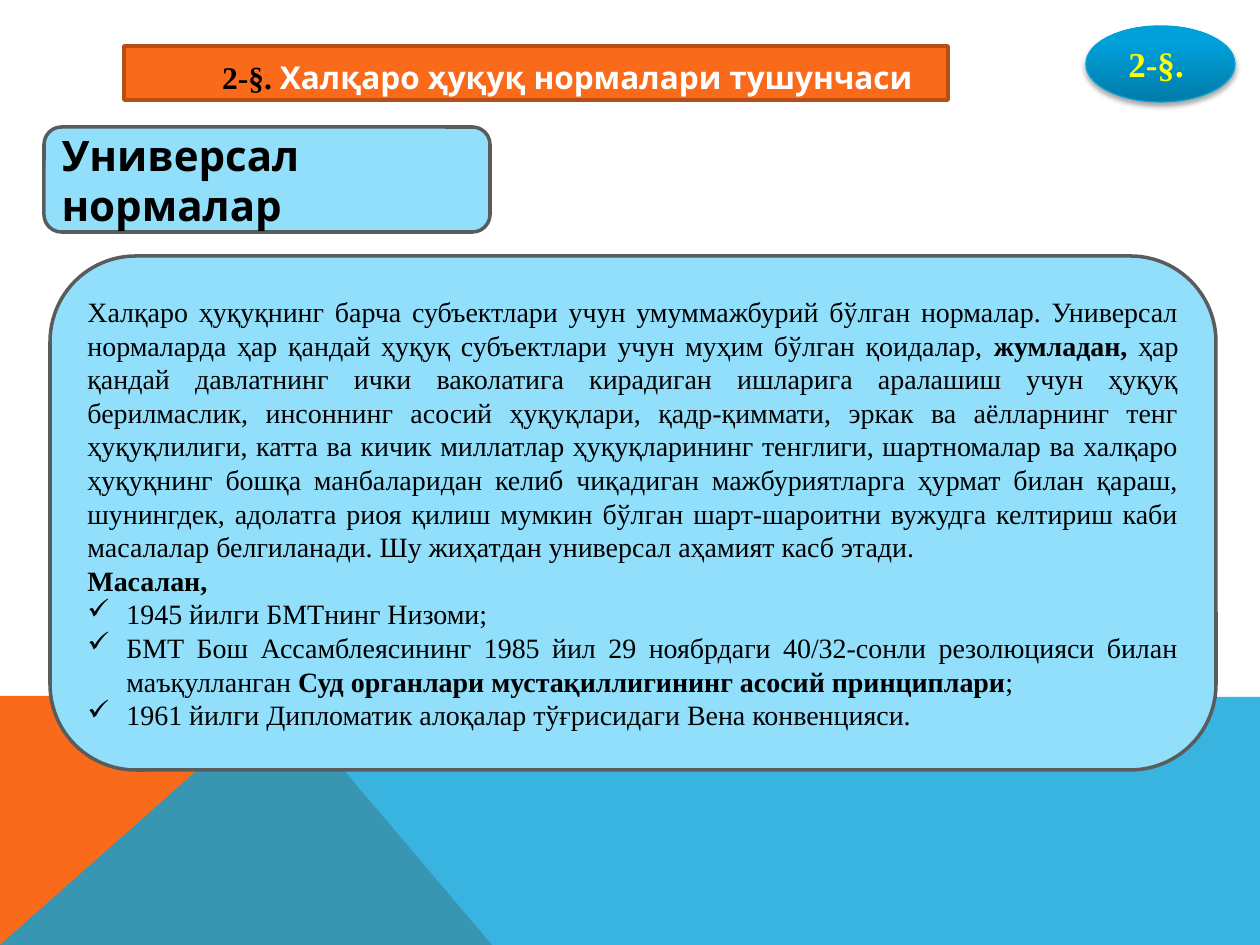
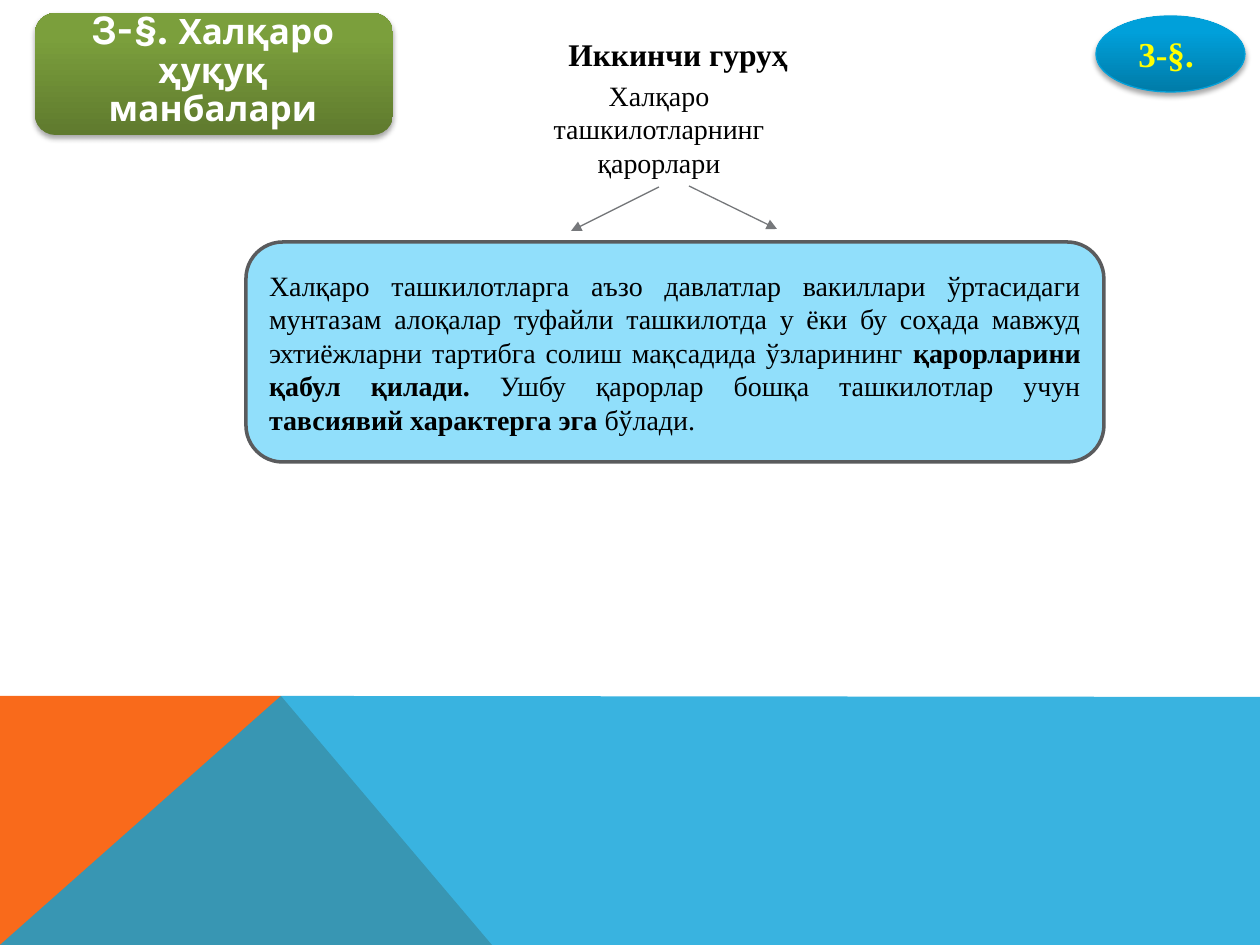
from lxml import etree
from pptx import Presentation
from pptx.dml.color import RGBColor
from pptx.enum.shapes import MSO_CONNECTOR, MSO_SHAPE
from pptx.enum.text import MSO_ANCHOR, MSO_AUTO_SIZE, PP_ALIGN
from pptx.oxml.ns import qn
from pptx.util import Pt

RECTANGLE, ROUNDED, OVAL = MSO_SHAPE.RECTANGLE, MSO_SHAPE.ROUNDED_RECTANGLE, MSO_SHAPE.OVAL
STRAIGHT = MSO_CONNECTOR.STRAIGHT
LEFT, CENTER, JUSTIFY = PP_ALIGN.LEFT, PP_ALIGN.CENTER, PP_ALIGN.JUSTIFY
TOP, MIDDLE = MSO_ANCHOR.TOP, MSO_ANCHOR.MIDDLE
GROW, FIXED = MSO_AUTO_SIZE.SHAPE_TO_FIT_TEXT, MSO_AUTO_SIZE.NONE

SCALE = 914400 / 126
WIDTH, HEIGHT = 1260, 945
SERIF, SANS = "Times New Roman", "Karla"
BLACK, WHITE, YELLOW = "000000", "FFFFFF", "FFFF00"
ORANGE, ORANGE_EDGE, BAND_BLUE = "F96A1B", "B84E14", "08A1D9"
CARD_FILL, CARD_EDGE, ARROW_GRAY = "91DFFB", "5A5B5D", "76787B"
BADGE_GRADIENT, BADGE_EDGE = ("007BA8", "00A0DA"), "03A0D9"
SECTION_GRADIENT = ("5F7A2E", "7B9F3C")
BULLET, BULLET_INDENT = "✓", 39

BANDS = [
    ([(0, 945), (0, 696), (281, 696), (492, 945)], ORANGE, 100),
    ([(0, 945), (281, 696), (1260, 697), (1260, 945)], BAND_BLUE, 80),
]

NORMS_TITLE = [[
    ("2-§. ", {"font": SERIF, "color": BLACK}),
    ("Халқаро ҳуқуқ нормалари тушунчаси", {}),
]]
NORMS_LABEL = [[("Универсал нормалар", {})]]
BOLD = {"bold": True}
NORMS_TEXT = [
    [
        ("Халқаро ҳуқуқнинг барча субъектлари учун умуммажбурий бўлган нормалар. "
         "Универсал нормаларда ҳар қандай ҳуқуқ субъектлари учун муҳим бўлган қоидалар, ", {}),
        ("жумладан, ", BOLD),
        ("ҳар қандай давлатнинг ички ваколатига кирадиган ишларига аралашиш учун ҳуқуқ "
         "берилмаслик, инсоннинг асосий ҳуқуқлари, қадр-қиммати, эркак ва аёлларнинг тенг "
         "ҳуқуқлилиги, катта ва кичик миллатлар ҳуқуқларининг тенглиги, шартномалар ва халқаро "
         "ҳуқуқнинг бошқа манбаларидан келиб чиқадиган мажбуриятларга ҳурмат билан қараш, "
         "шунингдек, адолатга риоя қилиш мумкин бўлган шарт-шароитни вужудга келтириш каби "
         "масалалар белгиланади. Шу жиҳатдан универсал аҳамият касб этади. ", {}),
    ],
    [("Масалан, ", BOLD)],
    [("1945 йилги БМТнинг Низоми;", {})],
    [
        ("БМТ Бош Ассамблеясининг 1985 йил 29 ноябрдаги 40/32-сонли резолюцияси билан "
         "маъқулланган ", {}),
        ("Суд органлари мустақиллигининг асосий принциплари", BOLD),
        (";", {}),
    ],
    [("1961 йилги Дипломатик алоқалар тўғрисидаги Вена конвенцияси. ", {})],
]
SOURCES_TITLE = [[("3-§. ", {"size": 24}), ("Халқаро ҳуқуқ манбалари", {})]]
GROUP_HEADING = [[("Иккинчи гуруҳ", {})]]
DECISIONS_HEADING = [[("Халқаро ташкилотларнинг қарорлари", {})]]
DECISIONS_TEXT = [[
    ("Халқаро ташкилотларга аъзо давлатлар вакиллари ўртасидаги мунтазам алоқалар туфайли "
     "ташкилотда у ёки бу соҳада мавжуд эхтиёжларни тартибга солиш мақсадида ўзларининг ", {}),
    ("қарорларини қабул қилади.", BOLD),
    (" Ушбу қарорлар бошқа ташкилотлар учун ", {}),
    ("тавсиявий характерга эга ", BOLD),
    ("бўлади. ", {}),
]]


def px(length):
    return round(length * SCALE)


def color(hex_string):
    return RGBColor.from_string(hex_string)


def add_xml(parent, tag, **attributes):
    return etree.SubElement(parent, qn(tag), {key: str(value) for key, value in attributes.items()})


def add_shape(shapes, preset, box, fill, edge=None, edge_width=2):
    shape = shapes.add_shape(preset, *map(px, box))
    shape.shadow.inherit = False
    if isinstance(fill, tuple):
        shape.fill.gradient()
        shape.fill.gradient_angle = 90
        for stop, position, hex_string in zip(shape.fill.gradient_stops, (0, 0.8), fill):
            stop.position = position
            stop.color.rgb = color(hex_string)
        add_soft_shadow(shape)
    else:
        shape.fill.solid()
        shape.fill.fore_color.rgb = color(fill)
    if edge:
        shape.line.color.rgb = color(edge)
        shape.line.width = Pt(edge_width)
    else:
        shape.line.fill.background()
    return shape


def add_soft_shadow(shape):
    effects = shape._element.spPr.find(qn("a:effectLst"))
    shadow = add_xml(effects, "a:outerShdw", blurRad=Pt(3.1), dist=Pt(1.8), dir=5400000, rotWithShape=0)
    add_xml(add_xml(shadow, "a:srgbClr", val=BLACK), "a:alpha", val=35000)


def write_text(shape, paragraphs, *, font=SERIF, size=16, hex_color=BLACK, bold=False,
               align=JUSTIFY, anchor=MIDDLE, wrap=True, auto_size=FIXED, spacing=None,
               indent=0, bulleted=(), inset=None):
    frame = shape.text_frame
    frame.word_wrap = wrap
    frame.auto_size = auto_size
    frame.vertical_anchor = anchor
    if inset is not None:
        frame.margin_left = frame.margin_right = frame.margin_top = frame.margin_bottom = px(inset)
    for index, runs in enumerate(paragraphs):
        paragraph = frame.add_paragraph() if index else frame.paragraphs[0]
        paragraph.alignment = align
        if spacing:
            paragraph.line_spacing = spacing
        properties = paragraph._p.get_or_add_pPr()
        if index in bulleted:
            properties.set("marL", str(px(BULLET_INDENT)))
            properties.set("indent", str(-px(BULLET_INDENT)))
            add_xml(properties, "a:buChar", char=BULLET)
        elif indent:
            properties.set("marL", str(px(indent)))
        for text, changes in runs:
            run = paragraph.add_run()
            run.text = text
            run.font.name = changes.get("font", font)
            run.font.size = Pt(changes.get("size", size))
            run.font.bold = changes.get("bold", bold)
            run.font.color.rgb = color(changes.get("color", hex_color))


def add_text_box(shapes, box, paragraphs, **text_format):
    text_box = shapes.add_textbox(*map(px, box))
    write_text(text_box, paragraphs, **text_format)
    return text_box


def add_card(slide, box, paragraphs, **text_format):
    card = add_shape(slide.shapes, ROUNDED, box, CARD_FILL, CARD_EDGE)
    write_text(card, paragraphs, **text_format)


def add_badge(slide, left, top, text):
    badge = add_shape(slide.shapes, OVAL, (left, top, 149, 76), BADGE_GRADIENT, BADGE_EDGE, 0.75)
    write_text(badge, [[(text, {})]], size=20, hex_color=YELLOW, bold=True, align=CENTER)


def add_arrow(slide, start, end):
    arrow = slide.shapes.add_connector(STRAIGHT, *map(px, start + end))
    arrow.line.color.rgb = color(ARROW_GRAY)
    arrow.line.width = Pt(0.75)
    add_xml(arrow.line._get_or_add_ln(), "a:tailEnd", type="triangle")
    add_xml(arrow._element.spPr, "a:effectLst")
    return arrow


def add_banded_slide(presentation):
    slide = presentation.slides.add_slide(presentation.slide_layouts[6])
    for points, hex_string, opacity in BANDS:
        builder = slide.shapes.build_freeform(*points[0], scale=SCALE)
        builder.add_line_segments(points[1:], close=True)
        band = builder.convert_to_shape()
        band.shadow.inherit = False
        band.fill.solid()
        band.fill.fore_color.rgb = color(hex_string)
        band.line.fill.background()
        if opacity < 100:
            fill_color = band._element.spPr.find(qn("a:solidFill"))[0]
            add_xml(fill_color, "a:alpha", val=opacity * 1000)
    return slide


def build_norms_slide(presentation):
    slide = add_banded_slide(presentation)
    banner = add_shape(slide.shapes, RECTANGLE, (124, 46, 824, 54), ORANGE, ORANGE_EDGE)
    write_text(banner, NORMS_TITLE, font=SANS, size=18, hex_color=WHITE, bold=True,
               align=CENTER, anchor=TOP, auto_size=GROW, spacing=1.15, indent=63)
    add_badge(slide, 1086, 26, "2-§. ")
    add_card(slide, (44, 127, 446, 105), NORMS_LABEL, font=SANS, size=24, bold=True)
    add_card(slide, (50, 256, 1166, 514), NORMS_TEXT, bulleted=(2, 3, 4))


def build_sources_slide(presentation):
    slide = add_banded_slide(presentation)
    add_badge(slide, 1096, 16, "3-§. ")
    section = slide.shapes.add_group_shape().shapes
    add_shape(section, ROUNDED, (35, 13, 358, 122), SECTION_GRADIENT)
    add_text_box(section, (45, 13, 336, 111), SOURCES_TITLE, font=SANS, size=20,
                 hex_color=WHITE, bold=True, align=CENTER, spacing=0.9, inset=19)
    add_text_box(slide.shapes, (556, 29, 255, 50), GROUP_HEADING, size=18, bold=True,
                 align=LEFT, anchor=TOP, wrap=False, auto_size=GROW)
    decisions = add_text_box(slide.shapes, (508, 72, 302, 115), DECISIONS_HEADING,
                             align=CENTER, anchor=TOP, auto_size=GROW)
    add_arrow(slide, (660, 184), (571, 231)).begin_connect(decisions, 2)
    add_card(slide, (246, 242, 858, 220), DECISIONS_TEXT)
    add_arrow(slide, (689, 186), (777, 229))


def main():
    presentation = Presentation()
    presentation.slide_width = px(WIDTH)
    presentation.slide_height = px(HEIGHT)
    build_norms_slide(presentation)
    build_sources_slide(presentation)
    presentation.save("out.pptx")


if __name__ == "__main__":
    main()
